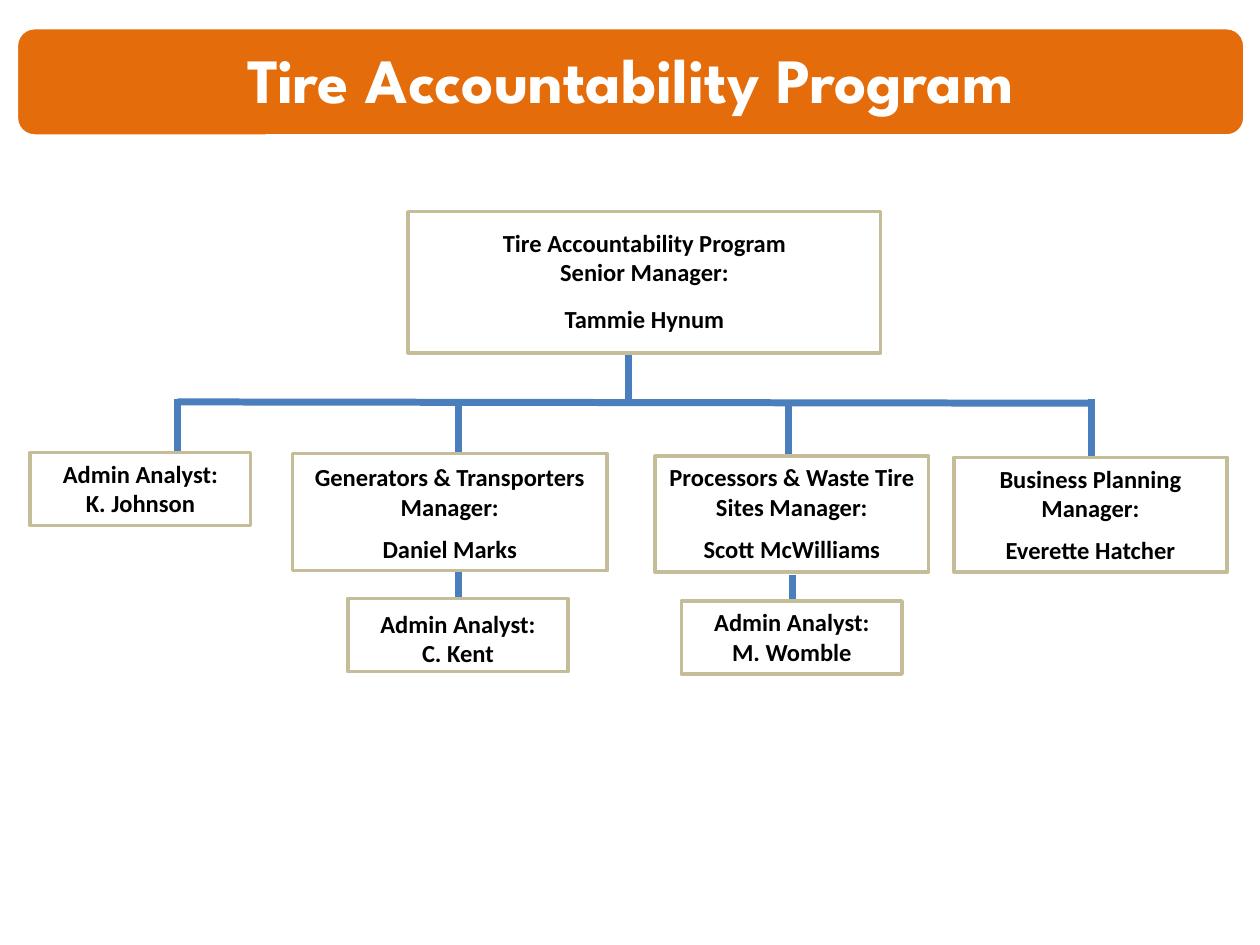
from lxml import etree
from pptx import Presentation, util as u
from pptx.dml.color import RGBColor
from pptx.enum import shapes, text
from pptx.oxml.ns import qn

COLORS = {"banner": "E46C0A", "white": "FFFFFF", "frame": "C4BD97",
          "link": "4B7EBC", "ink": "000000"}
COLUMNS, ROWS = 100, 75
WIDTH, HEIGHT = u.Inches(10), u.Inches(7.5)


def color(name):
    return RGBColor.from_string(COLORS[name])


def across(columns):
    return round(WIDTH * columns / COLUMNS)


def down(rows):
    return round(HEIGHT * rows / ROWS)


def cells(left, top, width, height):
    return across(left), down(top), across(width), down(height)


def write(paragraph, words, size=14, font="Calibri", ink="ink", before=0, after=0):
    paragraph.alignment = text.PP_ALIGN.CENTER
    paragraph.space_before = u.Pt(before)
    paragraph.space_after = u.Pt(after)
    run = paragraph.add_run()
    run.text = words
    run.font.size, run.font.name, run.font.bold = u.Pt(size), font, True
    run.font.color.rgb = color(ink)


def add_banner(slide, box, heading):
    left, top, width, height = box
    bar = slide.shapes.add_shape(shapes.MSO_SHAPE.ROUNDED_RECTANGLE, *cells(*box))
    bar.shadow.inherit = False
    bar.fill.solid()
    bar.fill.fore_color.rgb = color("banner")
    bar.line.color.rgb = color("white")
    bar.line.width = u.Pt(2)

    # Heading sits in front of the bar
    title = slide.shapes.title
    bar._element.getparent().append(title._element)
    title.left, title.top, title.width, title.height = cells(
        left + 0.4, top + 0.5, width - 0.8, height - 0.8)
    frame = title.text_frame
    frame.word_wrap = True
    frame.auto_size = text.MSO_AUTO_SIZE.NONE
    frame.vertical_anchor = text.MSO_ANCHOR.MIDDLE
    frame.margin_left = frame.margin_right = u.Inches(0.15)
    frame.margin_top = frame.margin_bottom = u.Inches(0.15)
    write(frame.paragraphs[0], heading, size=36, font="League Spartan", ink="white")
    frame.paragraphs[0].line_spacing = 0.9


def add_post(slide, box, role_lines, person, gap=0, inset=0.05):
    post = slide.shapes.add_shape(shapes.MSO_SHAPE.RECTANGLE, *cells(*box))
    post.shadow.inherit = False
    post.fill.background()
    post.line.color.rgb = color("frame")
    post.line.width = u.Pt(2)
    frame = post.text_frame
    frame.word_wrap = True
    frame.vertical_anchor = text.MSO_ANCHOR.TOP
    frame.margin_top, frame.margin_bottom = u.Inches(inset), 0
    for index, line in enumerate(role_lines):
        write(frame.add_paragraph() if index else frame.paragraphs[0], line)
    write(frame.add_paragraph(), person, before=gap)


def add_link(slide, x1, y1, x2, y2):
    link = slide.shapes.add_connector(
        shapes.MSO_CONNECTOR.STRAIGHT, across(x1), down(y1), across(x2), down(y2))
    link.line.color.rgb = color("link")
    link.line.width = u.Pt(4)
    etree.SubElement(link._element.spPr, qn("a:effectLst"))


def add_org_chart(slide, box):
    left, top, width, _ = box
    bus = top + 15.1
    first_drop, last_drop = left + 11.7, left + 84.2
    analyst_width, analyst_height = 17.5, 5.8

    # Links from the senior manager down to the bus
    add_link(slide, first_drop, bus, last_drop, bus + 0.1)
    add_link(slide, left + width / 2, top + 11.1, left + width / 2, bus)

    # Senior manager
    add_post(slide, (left + 30, top, 37.5, 11.2),
             ["Tire Accountability Program", "Senior Manager:"], "Tammie Hynum",
             gap=9.8, inset=0.13)

    # Direct reports: left, top, width, height, drop column, drop start, role, person, gap, inset
    reports = [
        (0, 19.1, analyst_width, analyst_height, 11.7, 14.9,
         "Admin Analyst:", "K. Johnson", 0, 0.05),
        (20.8, 19.2, 25, 9.3, 34, 15.1,
         "Generators & Transporters Manager:", "Daniel Marks", 7.3, 0.07),
        (49.6, 19.4, 21.7, 9.2, 60.2, 15.4,
         "Processors & Waste Tire Sites Manager:", "Scott McWilliams", 7.3, 0.05),
        (73.3, 19.5, 21.7, 9.1, 84.2, 14.9,
         "Business Planning Manager:", "Everette Hatcher", 7.3, 0.05),
    ]
    for x, y, w, h, drop, start, role, person, gap, inset in reports:
        add_link(slide, left + drop, top + start, left + drop, top + y)
        add_post(slide, (left + x, top + y, w, h), [role], person, gap, inset)

    # Analysts under the two middle managers
    for x, y, drop, person, inset in [(25.2, 30.7, 34, "C. Kent", 0.08),
                                      (51.7, 30.9, 60.5, "M. Womble", 0.05)]:
        add_link(slide, left + drop, top + y - 2.1, left + drop, top + y - 0.1)
        add_post(slide, (left + x, top + y, analyst_width, analyst_height),
                 ["Admin Analyst:"], person, inset=inset)


def main():
    deck = Presentation()
    deck.slide_width, deck.slide_height = WIDTH, HEIGHT
    slide = deck.slides.add_slide(deck.slide_layouts[5])
    add_banner(slide, (1.3, 2.2, 97.5, 8.6), "Tire Accountability Program")
    add_org_chart(slide, (2.4, 16.8, 95, 36.7))
    deck.save("out.pptx")


if __name__ == "__main__":
    main()
